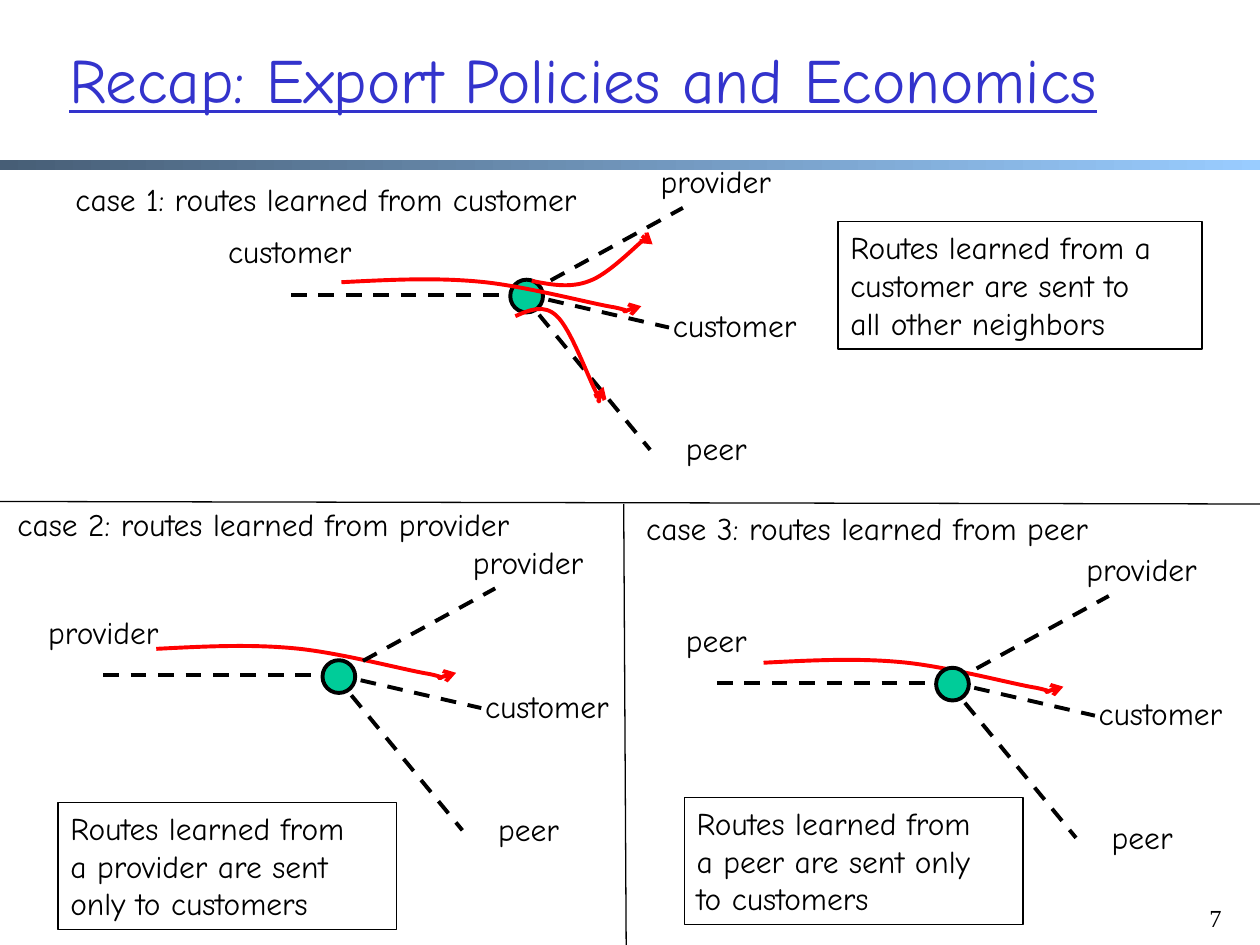
import pptx
import pptx.dml.color
import pptx.enum.dml
import pptx.enum.shapes
import pptx.enum.text
import pptx.oxml
import pptx.oxml.ns
import pptx.util

Inches = pptx.util.Inches
Pt = pptx.util.Pt
qn = pptx.oxml.ns.qn

COLORS = {"ink": "000000", "title": "3333CC", "node": "00CC99", "route": "FF0000",
          "bar_dark": "475E76", "bar_light": "99CCFF"}
FONT = "Comic Neue"

# Label sizes by neighbor name
LABEL_WIDTHS = {"customer": 1.28, "provider": 1.18, "peer": 0.73}

# Links from the node center to its neighbors
INCOMING = ((-1.87, -0.01), (0.03, -0.01))
OUTGOING = (((0, -0.02), (1.24, -0.7)),
            ((-0.04, -0.02), (1.13, 0.25)),
            ((-0.04, -0.02), (0.98, 1.22)))
NEIGHBORS = (("provider", 0.91, -1.11), ("customer", 1.01, 0.03), ("peer", 1.14, 1.01))

# Routes as a start point followed by cubic control points, from the start
TO_CUSTOMER = [(0, 0), (0.39, -0.02), (0.77, -0.04), (1.14, 0),
               (1.5, 0.04), (1.98, 0.17), (2.17, 0.2),
               (2.35, 0.24), (2.21, 0.23), (2.25, 0.23),
               (2.28, 0.22), (2.29, 0.21), (2.38, 0.19)]
TO_PROVIDER = [(0, 0), (0.15, 0.03), (0.31, 0.06), (0.46, 0),
               (0.6, -0.05), (0.8, -0.25), (0.87, -0.31),
               (0.95, -0.37), (0.89, -0.35), (0.91, -0.34),
               (0.92, -0.34), (0.92, -0.32), (0.96, -0.29)]
TO_PEER = [(0, 0), (0.11, -0.05), (0.23, -0.1), (0.33, 0),
           (0.44, 0.1), (0.58, 0.49), (0.64, 0.6),
           (0.69, 0.71), (0.65, 0.67), (0.66, 0.67),
           (0.67, 0.66), (0.67, 0.61), (0.7, 0.56)]


def rgb(name):
    return pptx.dml.color.RGBColor.from_string(COLORS[name])


def set_line(shape, color="ink", width=2.25, dashed=False, arrow=False):
    shape.line.color.rgb = rgb(color)
    shape.line.width = Pt(width)
    if dashed:
        shape.line.dash_style = pptx.enum.dml.MSO_LINE.DASH
    if arrow:
        tail = pptx.oxml.parse_xml(
            '<a:tailEnd xmlns:a="http://schemas.openxmlformats.org/drawingml/2006/main"'
            ' type="arrow"/>')
        shape.line._get_or_add_ln().append(tail)


def add_text(page, text, left, top, width, height=0.4, *, size=18, font=FONT,
             color="ink", align="LEFT", anchor="TOP", wrap=False, underline=None):
    box = page.shapes.add_textbox(*map(Inches, (left, top, width, height)))
    frame = box.text_frame
    frame.word_wrap = wrap
    if not wrap:
        frame.auto_size = pptx.enum.text.MSO_AUTO_SIZE.SHAPE_TO_FIT_TEXT
    frame.vertical_anchor = getattr(pptx.enum.text.MSO_ANCHOR, anchor)
    para = frame.paragraphs[0]
    para.text = text.replace("\n", "\v")
    para.alignment = getattr(pptx.enum.text.PP_ALIGN, align)
    for span in para.runs:
        span.font.size = Pt(size)
        span.font.name = font
        span.font.underline = underline
        span.font.color.rgb = rgb(color)
    return box


def add_line(page, start, end, **style):
    line = page.shapes.add_connector(pptx.enum.shapes.MSO_CONNECTOR.STRAIGHT,
                                     *map(Inches, (*start, *end)))
    set_line(line, **style)
    line._element.spPr.append(pptx.oxml.xmlchemy.OxmlElement("a:effectLst"))


def add_label(page, name, left, top):
    add_text(page, name, left, top, LABEL_WIDTHS[name], align="CENTER")


def add_route(page, left, top, points):
    """Draw a curved red arrow: every three vertices form one cubic curve."""
    places = [(Inches(left + x), Inches(top + y)) for x, y in points]
    builder = page.shapes.build_freeform(*places[0])
    builder.add_line_segments(places[1:], close=False)
    route = builder.convert_to_shape()
    segments = list(route._element.iter(qn("a:lnTo")))
    for index in range(0, len(segments), 3):
        curve = pptx.oxml.xmlchemy.OxmlElement("a:cubicBezTo")
        segments[index].addprevious(curve)
        for segment in segments[index:index + 3]:
            curve.append(segment[0])
            segment.getparent().remove(segment)
    route.fill.background()
    route.shadow.inherit = False
    set_line(route, "route", arrow=True)


def add_network(page, x, y, source, source_left, source_top):
    """Draw a node centered at x, y with its links and neighbor labels."""
    def shift(point):
        return x + point[0], y + point[1]

    add_line(page, *map(shift, INCOMING), dashed=True, arrow=True)
    for link in OUTGOING:
        add_line(page, *map(shift, link), dashed=True)
    add_label(page, source, x + source_left, y + source_top)
    for name, left, top in NEIGHBORS:
        add_label(page, name, x + left, y + top)
    node = page.shapes.add_shape(pptx.enum.shapes.MSO_SHAPE.OVAL, Inches(x - 0.13),
                                 Inches(y - 0.13), Inches(0.26), Inches(0.26))
    node.fill.solid()
    node.fill.fore_color.rgb = rgb("node")
    node.shadow.inherit = False
    set_line(node)


def add_rule_box(page, text, left, top, width):
    set_line(add_text(page, text, left, top, width, 1.01), width=0.75)


def add_header(page):
    bar = page.shapes.add_shape(pptx.enum.shapes.MSO_SHAPE.RECTANGLE,
                                0, Inches(1.27), Inches(10), Inches(0.08))
    bar.fill.gradient()
    bar.fill.gradient_angle = 0
    for stop, color in zip(bar.fill.gradient_stops, ("bar_dark", "bar_light")):
        stop.color.rgb = rgb(color)
    bar.line.fill.background()
    bar.shadow.inherit = False
    add_text(page, "Recap: Export Policies and Economics", 0.45, 0, 8.5, 1.25,
             size=36, color="title", anchor="MIDDLE", wrap=True, underline=True)


def add_customer_case(page, left, top):
    add_text(page, "case 1: routes learned from customer", left + 0.5, top, 4.56)
    add_network(page, left + 4.18, top + 0.97, "customer", -2.52, -0.56)
    add_route(page, left + 2.71, top + 0.86, TO_CUSTOMER)
    add_route(page, left + 4.22, top + 0.85, TO_PROVIDER)
    add_route(page, left + 4.09, top + 1.13, TO_PEER)
    add_rule_box(page, "Routes learned from a \ncustomer are sent to\nall other neighbors",
                 left + 6.65, top + 0.38, 2.89)


def add_provider_case(page, left, top):
    add_text(page, "case 2: routes learned from provider", left + 0.04, top, 4.5)
    add_route(page, left + 1.24, top + 1.19, TO_CUSTOMER)
    add_network(page, left + 2.69, top + 1.41, "provider", -2.46, -0.55)
    add_rule_box(page, "Routes learned from \na provider are sent\nonly to customers",
                 left + 0.46, top + 2.41, 2.69)


def add_peer_case(page, left, top):
    add_text(page, "case 3: routes learned from peer", left + 0.07, top, 4.05)
    add_route(page, left + 1.1, top + 1.27, TO_CUSTOMER)
    add_network(page, left + 2.6, top + 1.44, "peer", -2.24, -0.55)
    add_rule_box(page, "Routes learned from \na peer are sent only \nto customers",
                 left + 0.47, top + 2.34, 2.69)


def main():
    deck = pptx.Presentation()
    deck.slide_width, deck.slide_height = Inches(10), Inches(7.5)
    page = deck.slides.add_slide(deck.slide_layouts[6])
    add_header(page)
    add_customer_case(page, 0, 1.38)
    add_provider_case(page, 0, 3.96)
    add_peer_case(page, 4.96, 3.99)
    # Dividers between the cases
    add_line(page, (0, 3.98), (10, 4), width=0.75)
    add_line(page, (4.95, 4), (4.97, 7.5), width=0.75)
    # Page number
    add_text(page, "7", 9.5, 7.12, 0.5, 0.5, size=14, font="Times New Roman", wrap=True)
    deck.save("out.pptx")


if __name__ == "__main__":
    main()
